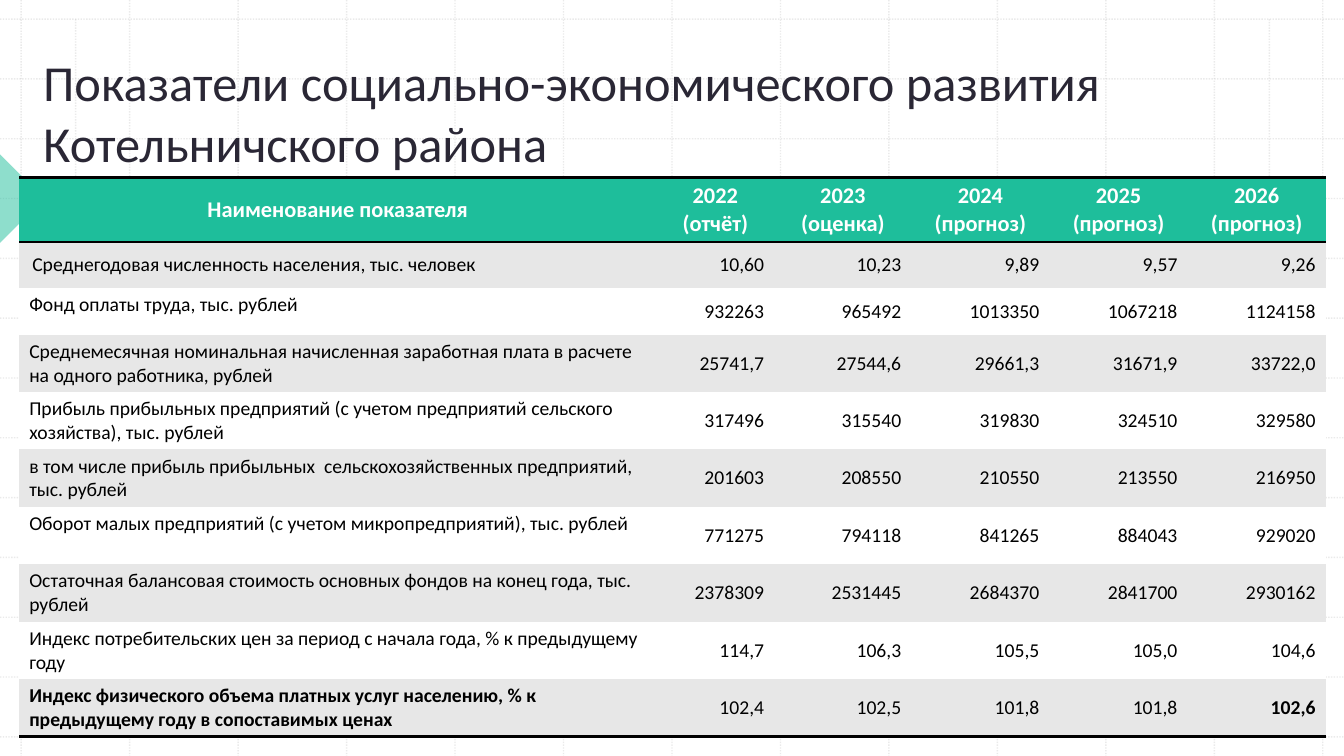
from lxml import etree
from pptx import Presentation
from pptx.dml.color import RGBColor
from pptx.enum.dml import MSO_LINE
from pptx.enum.shapes import MSO_CONNECTOR, MSO_SHAPE
from pptx.enum.text import MSO_ANCHOR, PP_ALIGN
from pptx.oxml.ns import qn
from pptx.util import Inches, Pt

STRAIGHT = MSO_CONNECTOR.STRAIGHT
DOTS = MSO_LINE.ROUND_DOT
TRIANGLE = MSO_SHAPE.RIGHT_TRIANGLE
TOP, MIDDLE, BOTTOM = MSO_ANCHOR.TOP, MSO_ANCHOR.MIDDLE, MSO_ANCHOR.BOTTOM
LEFT, CENTER, RIGHT = PP_ALIGN.LEFT, PP_ALIGN.CENTER, PP_ALIGN.RIGHT

GREEN = RGBColor(0x1E, 0xBE, 0x9B)
INK = RGBColor(0x2A, 0x27, 0x35)
BLACK = RGBColor(0, 0, 0)
WHITE = RGBColor(0xFF, 0xFF, 0xFF)
BAND = RGBColor(0xE7, 0xE7, 0xE7)
GRID = RGBColor(0xBC, 0xBC, 0xBC)

FONT = "Calibri"
PLAIN_STYLE = "{2D5ABB26-0587-4C30-8999-92F81FD0307C}"
WIDTH, HEIGHT = 13.33, 7.5
COLUMNS = [6.32, 1.17, 1.36, 1.37, 1.37, 1.37]
ROWS = [0.64, 0.46, 0.46] + [0.57] * 7

TITLE = "Показатели социально-экономического развития Котельничского района"
HEADER = ["Наименование показателя", "2022 (отчёт)", "2023 (оценка)",
          "2024 (прогноз)", "2025\n(прогноз)", "2026\n(прогноз)"]
INDICATORS = [
    ["Среднегодовая численность населения, тыс. человек",
     "10,60", "10,23", "9,89", "9,57", "9,26"],
    ["Фонд оплаты труда, тыс. рублей",
     "932263", "965492", "1013350", "1067218", "1124158"],
    ["Среднемесячная номинальная начисленная заработная плата в расчете на одного работника, рублей",
     "25741,7", "27544,6", "29661,3", "31671,9", "33722,0"],
    ["Прибыль прибыльных предприятий (с учетом предприятий сельского хозяйства), тыс. рублей",
     "317496", "315540", "319830", "324510", "329580"],
    ["в том числе прибыль прибыльных  сельскохозяйственных предприятий, тыс. рублей",
     "201603", "208550", "210550", "213550", "216950"],
    ["Оборот малых предприятий (с учетом микропредприятий), тыс. рублей",
     "771275", "794118", "841265", "884043", "929020"],
    ["Остаточная балансовая стоимость основных фондов на конец года, тыс. рублей",
     "2378309", "2531445", "2684370", "2841700", "2930162"],
    ["Индекс потребительских цен за период с начала года, % к предыдущему году",
     "114,7", "106,3", "105,5", "105,0", "104,6"],
    ["Индекс физического объема платных услуг населению, % к предыдущему году в сопоставимых ценах",
     "102,4", "102,5", "101,8", "101,8", "102,6"],
]


def set_alpha(element, percent):
    color = next(element.iter(qn("a:srgbClr")))
    etree.SubElement(color, qn("a:alpha"), val=str(percent * 1000))


def style_text(tf, size, color, bold=False, align=LEFT):
    for p in tf.paragraphs:
        p.alignment = align
        p.font.name = FONT
        p.font.size = Pt(size)
        p.font.bold = bold
        p.font.color.rgb = color


def add_grid_line(slide, x1, y1, x2, y2):
    s = slide.shapes.add_connector(
        STRAIGHT, Inches(x1), Inches(y1), Inches(x2), Inches(y2))
    s.line.color.rgb = GRID
    s.line.width = Pt(1)
    s.line.dash_style = DOTS
    sp = s._element.spPr
    set_alpha(sp, 30)
    etree.SubElement(sp, qn("a:effectLst"))


def add_grid(slide, left, top, width, height, count=12):
    right, bottom = left + width, top + height
    for i in range(count + 1):
        x = left + width * i / count
        y = top + height * i / count
        add_grid_line(slide, x, 0, x, HEIGHT)
        add_grid_line(slide, 0, y, WIDTH, y)
    for x in (left + 0.54, right - 0.53):
        add_grid_line(slide, x, top, x, bottom)


def add_marker(slide, left, top, size):
    s = slide.shapes.add_shape(
        TRIANGLE, Inches(left), Inches(top), Inches(size), Inches(size))
    s.rotation = 225
    s.shadow.inherit = False
    s.fill.solid()
    s.fill.fore_color.rgb = GREEN
    set_alpha(s._element.spPr, 50)
    s.line.fill.background()


def add_title(slide, left, top, width, height):
    s = slide.shapes.add_textbox(
        Inches(left), Inches(top), Inches(width), Inches(height))
    tf = s.text_frame
    tf.word_wrap = True
    tf.vertical_anchor = BOTTOM
    tf.text = TITLE
    style_text(tf, 36, INK)


def add_border(cell, tags):
    tc_pr = cell._tc.get_or_add_tcPr()
    for i, tag in enumerate(tags):
        ln = etree.Element(qn(tag), w=str(Pt(2)))
        fill = etree.SubElement(ln, qn("a:solidFill"))
        etree.SubElement(fill, qn("a:srgbClr"), val=str(BLACK))
        tc_pr.insert(i, ln)


def fill_cell(cell, text, row, col):
    header, last = row == 0, row == len(INDICATORS)
    cell.text = text
    cell.fill.solid()
    cell.fill.fore_color.rgb = GREEN if header else BAND if row % 2 else WHITE
    cell.vertical_anchor = TOP if col == 0 and row > 1 else MIDDLE
    if header or (row == 1 and col == 0):
        cell.margin_left = cell.margin_right = Inches(0.13)
    if header:
        style_text(cell.text_frame, 16, WHITE, True, CENTER)
        add_border(cell, ["a:lnT", "a:lnB"])
    else:
        bold = last and col in (0, len(COLUMNS) - 1)
        style_text(cell.text_frame, 14, BLACK, bold, RIGHT if col else LEFT)
    if last:
        add_border(cell, ["a:lnB"])


def add_indicators(slide, left, top):
    s = slide.shapes.add_table(
        len(ROWS), len(COLUMNS), Inches(left), Inches(top),
        Inches(sum(COLUMNS)), Inches(sum(ROWS)))
    table = s.table
    next(table._tbl.iter(qn("a:tableStyleId"))).text = PLAIN_STYLE
    for column, width in zip(table.columns, COLUMNS):
        column.width = Inches(width)
    for row, height in zip(table.rows, ROWS):
        row.height = Inches(height)
    for i, texts in enumerate([HEADER] + INDICATORS):
        for j, text in enumerate(texts):
            fill_cell(table.cell(i, j), text, i, j)


def main():
    prs = Presentation()
    prs.slide_width, prs.slide_height = Inches(WIDTH), Inches(HEIGHT)
    slide = prs.slides.add_slide(prs.slide_layouts[6])
    add_grid(slide, 0.21, 0.19, 12.91, 7.12)
    add_marker(slide, -0.31, 1.66, 0.62)
    add_title(slide, 0.33, 0.18, 11.29, 1.58)
    add_indicators(slide, 0.19, 1.76)
    prs.save("out.pptx")


if __name__ == "__main__":
    main()
